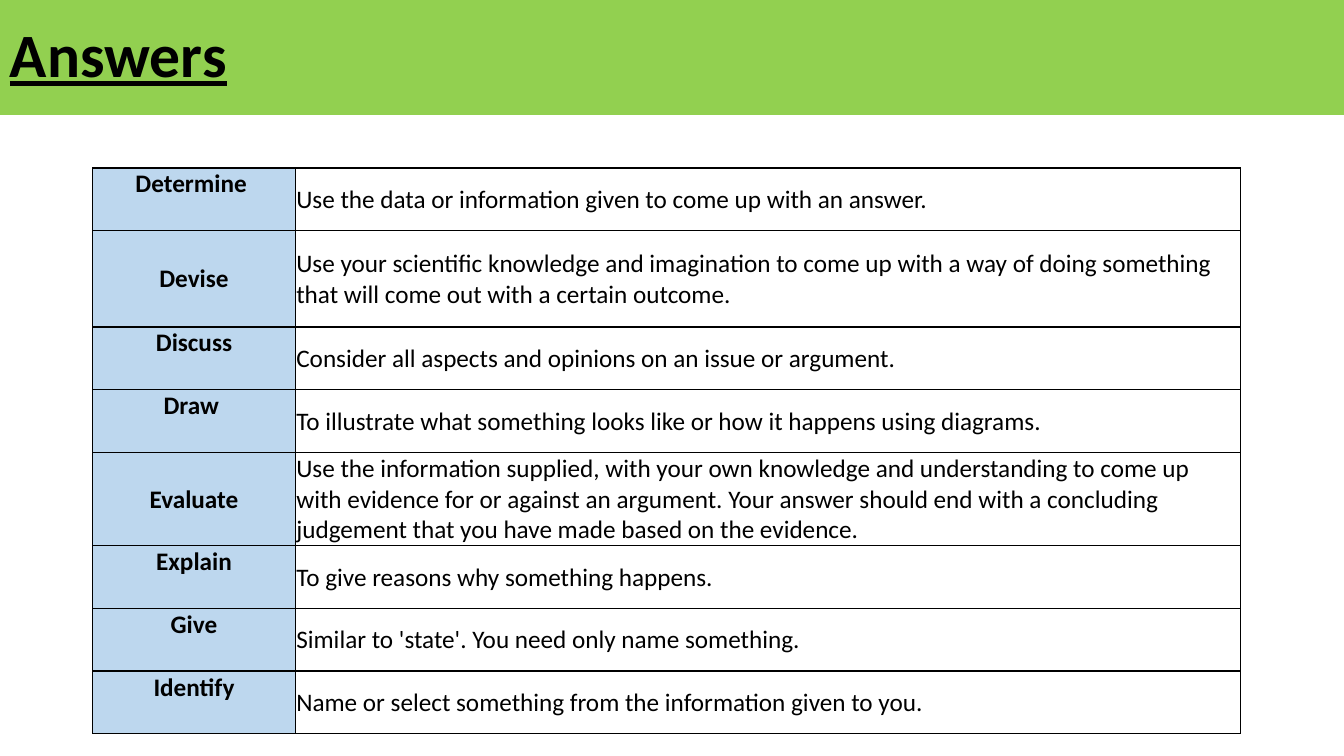
from lxml.etree import SubElement
from pptx import Presentation
from pptx.dml.color import RGBColor
from pptx.enum.shapes import MSO_SHAPE
from pptx.enum.text import MSO_ANCHOR, PP_ALIGN
from pptx.oxml.ns import qn
from pptx.util import Pt

# Content: command word, meaning, number of text lines
TITLE = "Answers"
COMMANDS = [
    ("Determine ", "Use the data or information given to come up with an answer.", 1),
    ("Devise", "Use your scientific knowledge and imagination to come up with a way of "
     "doing something that will come out with a certain outcome.", 2),
    ("Discuss", "Consider all aspects and opinions on an issue or argument.", 1),
    ("Draw ", "To illustrate what something looks like or how it happens using diagrams.", 1),
    ("Evaluate", "Use the information supplied, with your own knowledge and understanding "
     "to come up with evidence for or against an argument. Your answer should end with a "
     "concluding judgement that you have made based on the evidence.", 3),
    ("Explain", "To give reasons why something happens.", 1),
    ("Give", "Similar to 'state'. You need only name something.", 1),
    ("Identify", "Name or select something from the information given to you.", 1),
]

THEME = {
    "font": "Calibri", "title_size": 44, "body_size": 18,
    "ink": "000000", "banner": "92D050", "term": "BDD7EE",
}

# Geometry in points
SLIDE_W, SLIDE_H = 960, 540
BANNER_H = 82
TABLE_X, TABLE_Y = 66.2, 120
COL_WIDTHS = (144.8, 675)
ROW_HEIGHTS = {1: 44.8, 2: 68.8, 3: 66.2}
INSET = 0.7


def color(name):
    return RGBColor.from_string(THEME[name])


def style(p, size, bold, underline=False):
    for r in p.runs:
        r.font.name, r.font.size = THEME["font"], Pt(THEME[size])
        r.font.bold, r.font.underline = bold, underline
        r.font.color.rgb = color("ink")


def add_borders(cell):
    """Borders must come before the fill in the cell properties."""
    tc_pr = cell._tc.get_or_add_tcPr()
    for side in ("a:lnL", "a:lnR", "a:lnT", "a:lnB"):
        ln = SubElement(tc_pr, qn(side), w=str(Pt(1)))
        fill = SubElement(ln, qn("a:solidFill"))
        SubElement(fill, qn("a:srgbClr"), val=THEME["ink"])


def fill_cell(cell, text, is_term, lines):
    add_borders(cell)
    cell.margin_left = cell.margin_right = cell.margin_top = Pt(INSET)
    cell.margin_bottom = 0
    cell.vertical_anchor = MSO_ANCHOR.TOP if is_term and lines == 1 else MSO_ANCHOR.MIDDLE
    if is_term:
        cell.fill.solid()
        cell.fill.fore_color.rgb = color("term")
    else:
        cell.fill.background()
    p = cell.text_frame.paragraphs[0]
    p.text = text
    p.alignment = PP_ALIGN.CENTER if is_term else PP_ALIGN.LEFT
    style(p, "body_size", bold=is_term)


def add_banner(s):
    sp = s.shapes.add_shape(MSO_SHAPE.RECTANGLE, 0, 0, Pt(SLIDE_W), Pt(BANNER_H))
    sp.shadow.inherit = False
    sp.fill.solid()
    sp.fill.fore_color.rgb = color("banner")
    sp.line.fill.background()
    tf = sp.text_frame
    tf.word_wrap = True
    tf.vertical_anchor = MSO_ANCHOR.MIDDLE
    p = tf.paragraphs[0]
    p.text = TITLE
    p.alignment = PP_ALIGN.LEFT
    p.line_spacing = 0.9
    style(p, "title_size", bold=True, underline=True)


def add_commands(s):
    heights = [ROW_HEIGHTS[lines] for _, _, lines in COMMANDS]
    table = s.shapes.add_table(
        len(COMMANDS), len(COL_WIDTHS), Pt(TABLE_X), Pt(TABLE_Y),
        Pt(sum(COL_WIDTHS)), Pt(sum(heights))).table
    table.first_row = table.horz_banding = False
    for col, width in zip(table.columns, COL_WIDTHS):
        col.width = Pt(width)
    for i, (term, meaning, lines) in enumerate(COMMANDS):
        table.rows[i].height = Pt(heights[i])
        fill_cell(table.cell(i, 0), term, True, lines)
        fill_cell(table.cell(i, 1), meaning, False, lines)


def main():
    prs = Presentation()
    prs.slide_width, prs.slide_height = Pt(SLIDE_W), Pt(SLIDE_H)
    s = prs.slides.add_slide(prs.slide_layouts[6])
    add_banner(s)
    add_commands(s)
    prs.save("out.pptx")


if __name__ == "__main__":
    main()
